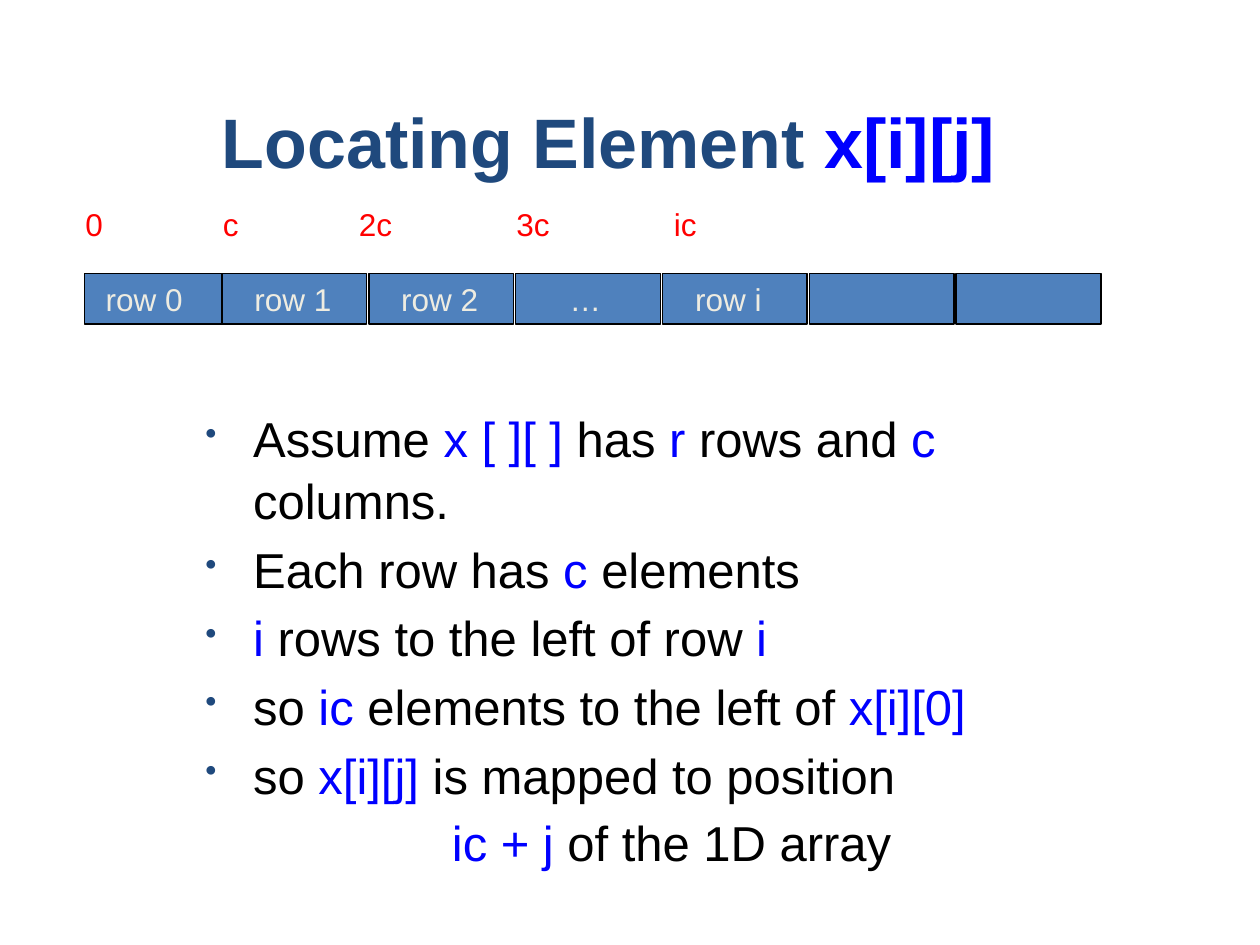
"""Build a slide that locates element x[i][j] in a row-major array."""
from lxml import etree
from pptx import Presentation
from pptx import util as u
from pptx.dml.color import RGBColor
from pptx.enum import shapes, text
from pptx.oxml.ns import qn

THEME = dict(font="Arial", navy="1F497D", blue="0000FF", black="000000", red="FF0000",
             cell="4F81BD", pale="EEECE1", title=40, body=28, label=18)

TITLE = [("Locating Element", "navy"), (" x[i][j]", "blue")]
ROWS = [("row 0", 0.07), ("row 1", 0.16), ("row 2", 0.16), ("…", 0.33), ("row i", 0.16),
        (None, 0), (None, 0)]
OFFSETS = [("0", 0.58, 0.33), ("c", 1.67, 0.33), ("2c", 2.75, 0.67), ("3c", 4, 0.58),
           ("ic", 5.25, 0.75)]
POINTS = [
    [("Assume ", "black"), ("x [ ][ ]", "blue"), (" has ", "black"), ("r", "blue"),
     (" rows and ", "black"), ("c", "blue"), (" columns.", "black")],
    [("Each row has ", "black"), ("c", "blue"), (" elements", "black")],
    [("i", "blue"), (" rows to the left of row ", "black"), ("i", "blue")],
    [("so ", "black"), ("ic", "blue"), (" elements to the left of ", "black"),
     ("x[i][0]", "blue")],
    [("so ", "black"), ("x[i][j] ", "blue"), ("is mapped to position", "black")],
]
RESULT = [("ic + j ", "blue"), ("of the 1D array", "black")]
ROW_TOP, CELL_W, CELL_H = 2.17, 1.15, 0.4
FIRST_LEFT, SECOND_LEFT, CELL_STEP = 0.67, 1.76, 1.166


def color(name):
    return RGBColor.from_string(THEME[name])


def write(paragraph, runs, size, bold=False, align=None, before=0, spacing=None):
    paragraph.alignment = align
    paragraph.space_before = u.Pt(before)
    if spacing:
        paragraph.line_spacing = spacing
    for words, tint in runs:
        run = paragraph.add_run()
        run.text = words
        run.font.name, run.font.size, run.font.bold = THEME["font"], u.Pt(THEME[size]), bold
        run.font.color.rgb = color(tint)


def add_box(slide, left, top, width, height):
    frame = slide.shapes.add_textbox(*map(u.Inches, (left, top, width, height))).text_frame
    frame.word_wrap = True
    return frame


def indent(paragraph, margin, hanging, bullet=None):
    props = paragraph._p.get_or_add_pPr()
    props.set("marL", str(u.Inches(margin)))
    props.set("indent", str(-u.Inches(hanging)))
    if bullet:
        tint = etree.SubElement(props, qn("a:buClr"))
        etree.SubElement(tint, qn("a:srgbClr"), val=THEME["navy"])
        etree.SubElement(props, qn("a:buSzPct"), val="68000")
        etree.SubElement(props, qn("a:buChar"), char=bullet)


def add_row(slide, index, label, inset):
    left = SECOND_LEFT + (index - 1) * CELL_STEP if index else FIRST_LEFT
    cell = slide.shapes.add_shape(shapes.MSO_SHAPE.RECTANGLE,
                                  *map(u.Inches, (left, ROW_TOP, CELL_W, CELL_H)))
    cell.shadow.inherit = False
    cell.fill.solid()
    cell.fill.fore_color.rgb = color("cell")
    cell.line.color.rgb, cell.line.width = color("black"), u.Pt(1)
    if label:
        frame = add_box(slide, left + inset, ROW_TOP, 1.08, 0.43)
        write(frame.paragraphs[0], [(label, "pale")], "label")


def add_points(slide):
    frame = add_box(slide, 1.58, 3.17, 7, 1.92)
    frame.margin_left = frame.margin_right = u.Inches(0.05)
    for number, runs in enumerate(POINTS):
        point = frame.add_paragraph() if number else frame.paragraphs[0]
        indent(point, 0.38, 0.38, "•")
        write(point, runs, "body", before=4 if number else 0, spacing=1.05)
    result = frame.add_paragraph()
    result.level = 1
    indent(result, 0.81, 0.31)
    write(result, RESULT, "body", align=text.PP_ALIGN.CENTER, before=3.2, spacing=1.05)


def main():
    deck = Presentation()
    deck.slide_width, deck.slide_height = u.Inches(10), u.Inches(7.5)
    slide = deck.slides.add_slide(deck.slide_layouts[5])
    title = slide.shapes.title
    title.left, title.top, title.width, title.height = map(u.Inches, (0.58, 0.25, 8.5, 1.25))
    title.text_frame.vertical_anchor = text.MSO_ANCHOR.BOTTOM
    write(title.text_frame.paragraphs[0], TITLE, "title", bold=True, align=text.PP_ALIGN.CENTER)
    add_points(slide)
    for index, (label, inset) in enumerate(ROWS):
        add_row(slide, index, label, inset)
    for offset, left, width in OFFSETS:
        frame = add_box(slide, left, 1.58, width, 0.4)
        write(frame.paragraphs[0], [(offset, "red")], "label")
    deck.save("out.pptx")


if __name__ == "__main__":
    main()
